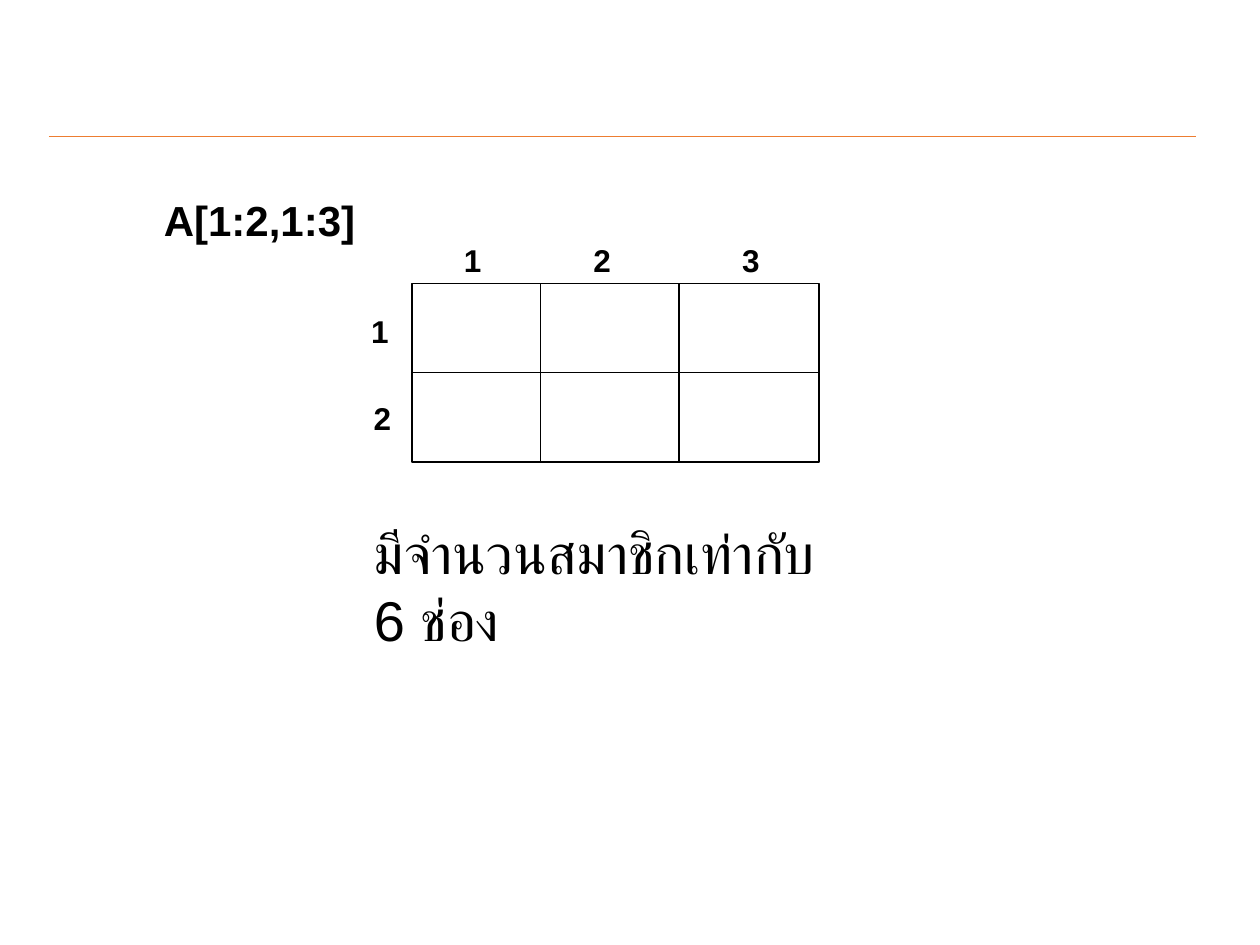
from lxml import etree
from pptx import Presentation
from pptx import util as u
from pptx.dml.color import RGBColor
from pptx.enum import shapes, text
from pptx.oxml.ns import qn

COLORS = {"ink": "000000", "rule": "ED7D31"}
FONT = "Arial"

# Array grid, in points
LEFT, TOP, RIGHT, BOTTOM = 235.5, 162, 468, 264
MIDDLE = (TOP + BOTTOM) / 2
COLUMN_EDGES = (309, 388)
LABEL_SIZE = (24.5, 29)


def add_line(slide, x1, y1, x2, y2, color="ink", weight=0.75):
    line = slide.shapes.add_connector(
        shapes.MSO_CONNECTOR.STRAIGHT, u.Pt(x1), u.Pt(y1), u.Pt(x2), u.Pt(y2))
    line.line.color.rgb = RGBColor.from_string(COLORS[color])
    line.line.width = u.Pt(weight)
    etree.SubElement(line._element.spPr, qn("a:effectLst"))


def add_frame(slide, left, top, width, height):
    frame = slide.shapes.add_shape(
        shapes.MSO_SHAPE.RECTANGLE, u.Pt(left), u.Pt(top), u.Pt(width), u.Pt(height))
    frame.shadow.inherit = False
    frame.fill.background()
    frame.line.color.rgb = RGBColor.from_string(COLORS["ink"])
    frame.line.width = u.Pt(0.75)


def add_text(slide, content, left, top, width, height, size, bold=True, wrap=False):
    box = slide.shapes.add_textbox(u.Pt(left), u.Pt(top), u.Pt(width), u.Pt(height))
    text_frame = box.text_frame
    text_frame.text = content
    text_frame.word_wrap = wrap
    text_frame.auto_size = text.MSO_AUTO_SIZE.SHAPE_TO_FIT_TEXT
    font = text_frame.paragraphs[0].runs[0].font
    font.name = FONT
    font.size = u.Pt(size)
    font.bold = bold
    font.color.rgb = RGBColor.from_string(COLORS["ink"])


def add_array_grid(slide):
    add_frame(slide, LEFT, TOP, RIGHT - LEFT, BOTTOM - TOP)
    add_line(slide, LEFT, MIDDLE, RIGHT, MIDDLE)
    for x in COLUMN_EDGES:
        add_line(slide, x, TOP, x, BOTTOM)

    # Row and column indices
    for number, (left, top) in enumerate(((205, 175), (206.5, 224.5)), 1):
        add_text(slide, str(number), left, top, *LABEL_SIZE, 18)
    for number, left in enumerate((258, 332, 417), 1):
        add_text(slide, str(number), left, 134, *LABEL_SIZE, 18)


def main():
    presentation = Presentation()
    presentation.slide_width, presentation.slide_height = u.Pt(720), u.Pt(540)
    slide = presentation.slides.add_slide(presentation.slide_layouts[6])

    # Header rule
    add_line(slide, 28, 78, 683.5, 78, "rule", 0.5)

    # Array declaration, its grid and the element count
    add_array_grid(slide)
    add_text(slide, "A[1:2,1:3]", 86.5, 107.5, 124, 36, 24)
    add_text(slide, "มีจำนวนสมาชิกเท่ากับ 6 ช่อง", 206.5, 292.5, 287, 45.5, 32,
             bold=False, wrap=True)

    presentation.save("out.pptx")


if __name__ == "__main__":
    main()
